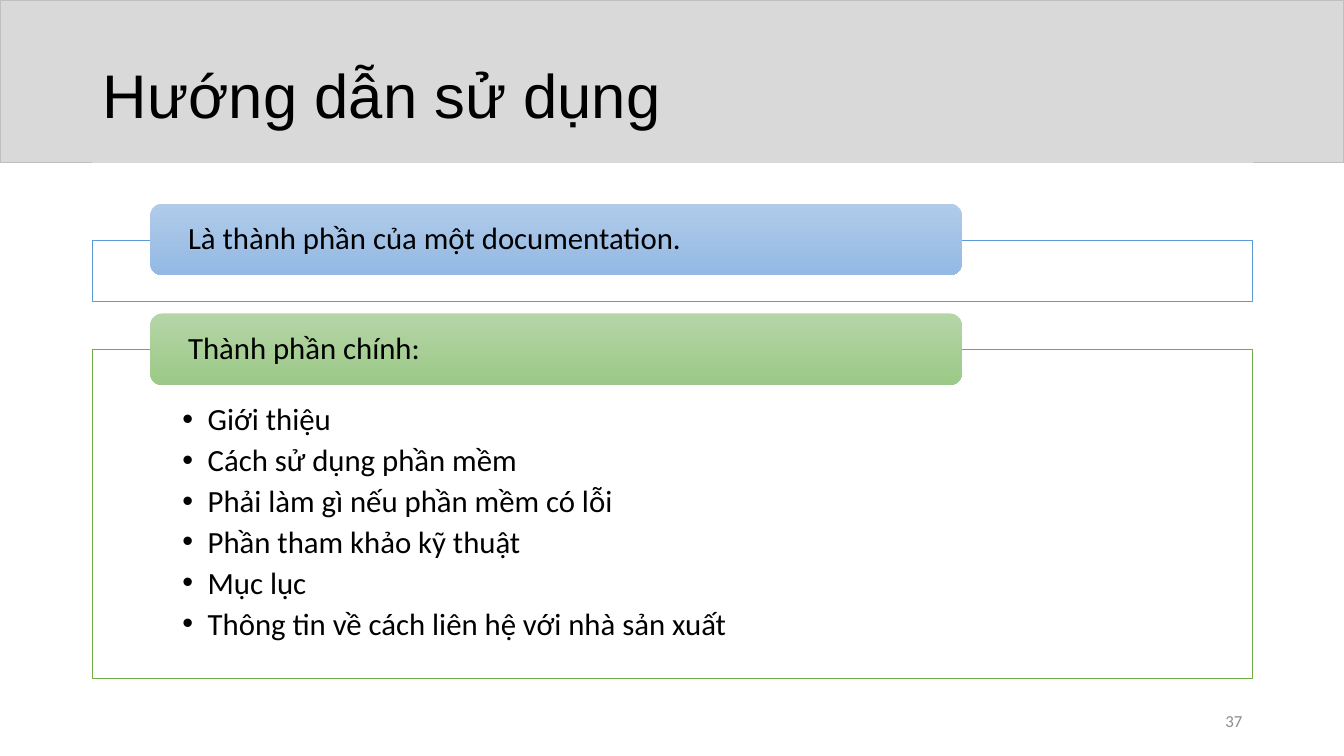
from dataclasses import dataclass

from lxml.etree import SubElement
from pptx import Presentation
from pptx.dml.color import RGBColor
from pptx.enum.shapes import MSO_SHAPE as Shape
from pptx.enum.text import MSO_ANCHOR as Anchor, MSO_AUTO_SIZE as AutoSize, PP_ALIGN as Align
from pptx.oxml.ns import qn
from pptx.util import Inches, Pt


@dataclass(frozen=True)
class Theme:
    title_font: str = "Arial"
    body_font: str = "Calibri"
    title_size: int = 44
    body_size: int = 22
    number_size: int = 12
    text: str = "000000"
    muted: str = "8C8C8C"
    paper: str = "FFFFFF"
    band: str = "D9D9D9"
    band_line: str = "BFBFBF"
    blue: tuple = ("5B9BD5", "B1CBE9", "93B9E4")  # line, gradient top, gradient bottom
    green: tuple = ("70AD47", "B5D5A7", "9CC987")


def rgb(value):
    return RGBColor.from_string(value)


class SlideBuilder:
    left, width = 0.92, 11.5

    def __init__(self, presentation, theme):
        self.theme = theme
        self.slide = presentation.slides.add_slide(presentation.slide_layouts[5])

    def box(self, kind, left, top, width, height):
        shape = self.slide.shapes.add_shape(
            kind, Inches(left), Inches(top), Inches(width), Inches(height))
        shape.shadow.inherit = False
        return shape

    def rectangle(self, left, top, width, height, fill, line, weight):
        shape = self.box(Shape.RECTANGLE, left, top, width, height)
        shape.fill.solid()
        shape.fill.fore_color.rgb = rgb(fill)
        shape.line.color.rgb = rgb(line)
        shape.line.width = Pt(weight)
        return shape

    def set_text(self, shape, lines, size, font=None, color=None, align=Align.LEFT,
                 anchor=Anchor.MIDDLE, insets=(0.1, 0.05, 0.1, 0.05)):
        frame = shape.text_frame
        frame.text = "\n".join(lines)
        frame.word_wrap = True
        frame.auto_size = AutoSize.NONE
        frame.vertical_anchor = anchor
        (frame.margin_left, frame.margin_top,
         frame.margin_right, frame.margin_bottom) = map(Inches, insets)
        for paragraph in frame.paragraphs:
            paragraph.alignment = align
            for run in paragraph.runs:
                run.font.name = font or self.theme.body_font
                run.font.size = Pt(size)
                run.font.color.rgb = rgb(color or self.theme.text)
        return frame.paragraphs

    def title_band(self, text, height):
        band = self.rectangle(0, 0, 13.33, height, self.theme.band, self.theme.band_line, 1)
        title = self.slide.shapes.title
        title._element.addprevious(band._element)
        title.left, title.top = Inches(self.left), Inches(0.35)
        title.width, title.height = Inches(self.width), Inches(height - 0.35)
        title.line.color.rgb = rgb(self.theme.band)
        title.line.width = Pt(0.75)
        paragraphs = self.set_text(title, [text], self.theme.title_size, self.theme.title_font)
        paragraphs[0].line_spacing = 0.9

    def section(self, heading, top, height, colors, items=()):
        line, light, dark = colors
        # Framed body
        body = self.rectangle(self.left, top, self.width, height, self.theme.paper, line, 0.5)
        if items:
            paragraphs = self.set_text(body, items, self.theme.body_size, anchor=Anchor.TOP,
                                       insets=(0.89, 0.5, 0.89, 0.17))
            for paragraph in paragraphs:
                self.bullet(paragraph)
        # Heading tab over the frame's top edge
        tab = self.box(Shape.ROUNDED_RECTANGLE, 1.49, top - 0.36, 8.05, 0.71)
        tab.line.fill.background()
        tab.fill.gradient()
        tab.fill.gradient_angle = 270
        for stop, color in zip(tab.fill.gradient_stops, (light, dark)):
            stop.color.rgb = rgb(color)
        paragraphs = self.set_text(tab, [heading], self.theme.body_size,
                                   insets=(0.34, 0.04, 0.34, 0.04))
        paragraphs[0].line_spacing = 0.9

    def bullet(self, paragraph):
        paragraph.space_after = Pt(2.8)
        properties = paragraph._p.get_or_add_pPr()
        properties.set("marL", str(Inches(0.25)))
        properties.set("indent", str(Inches(-0.25)))
        SubElement(properties, qn("a:buFont"), typeface=self.theme.title_font)
        SubElement(properties, qn("a:buChar"), char="•")

    def page_number(self, text):
        box = self.slide.shapes.add_textbox(Inches(9.42), Inches(6.95), Inches(3), Inches(0.4))
        self.set_text(box, [text], self.theme.number_size, color=self.theme.muted,
                      align=Align.RIGHT)


def main():
    presentation = Presentation()
    presentation.slide_width, presentation.slide_height = Inches(13.33), Inches(7.5)
    theme = Theme()
    builder = SlideBuilder(presentation, theme)

    # Header
    builder.title_band("Hướng dẫn sử dụng", 1.61)

    # Sections
    builder.section("Là thành phần của một documentation.", 2.38, 0.61, theme.blue)
    builder.section("Thành phần chính:", 3.47, 3.26, theme.green, [
        "Giới thiệu",
        "Cách sử dụng phần mềm",
        "Phải làm gì nếu phần mềm có lỗi",
        "Phần tham khảo kỹ thuật",
        "Mục lục",
        "Thông tin về cách liên hệ với nhà sản xuất",
    ])

    # Footer
    builder.page_number("37")
    presentation.save("out.pptx")


if __name__ == "__main__":
    main()
